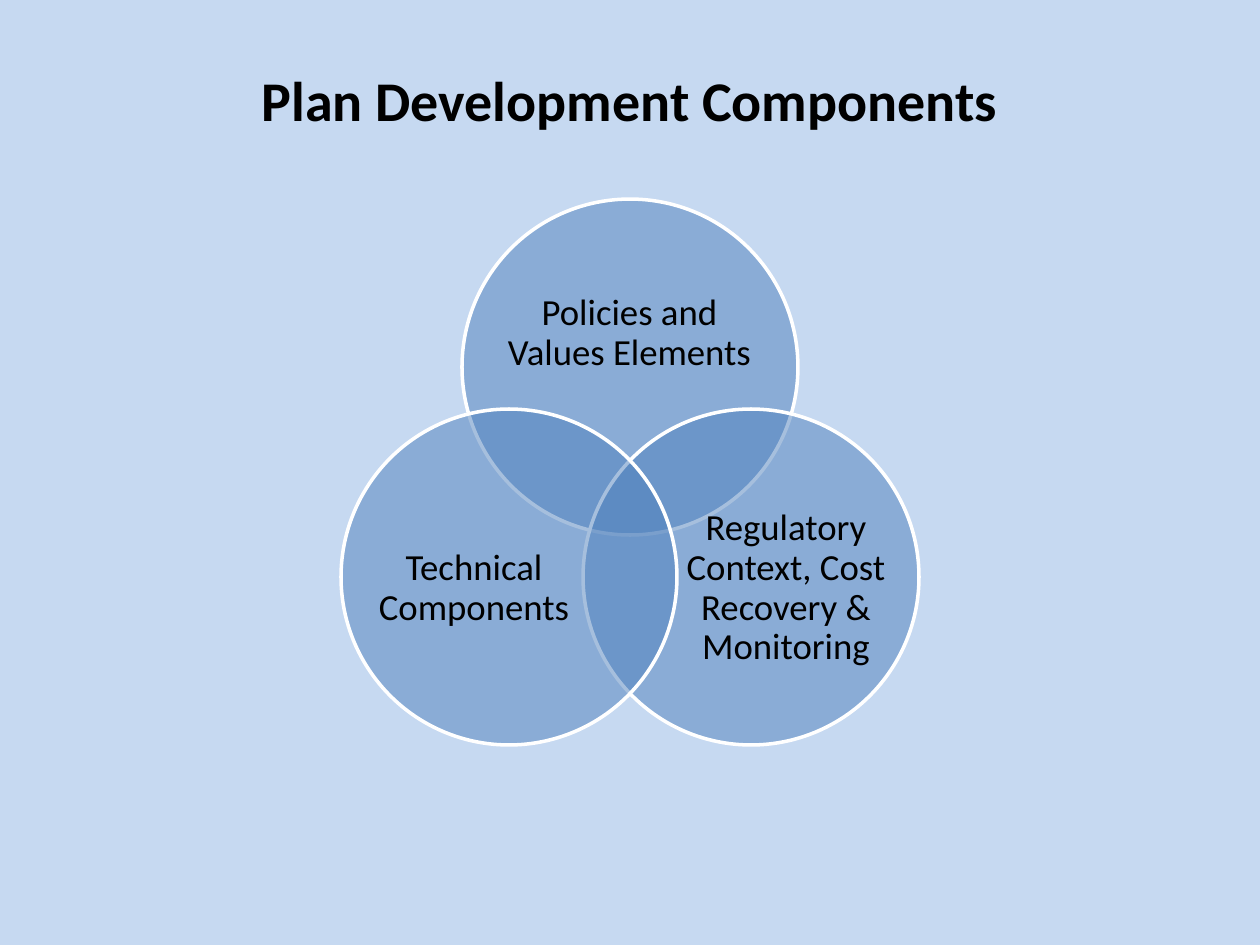
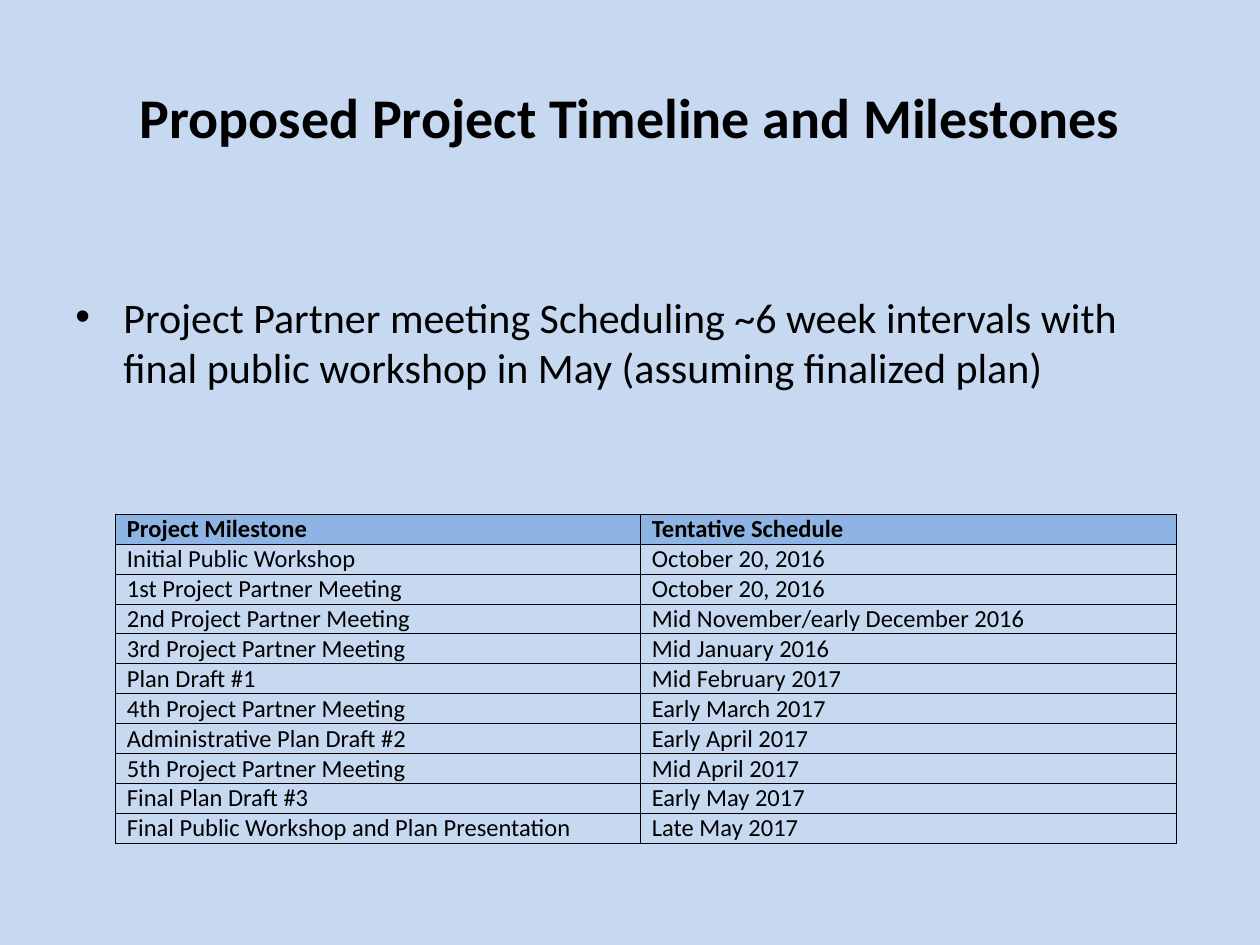
from lxml import etree
from pptx import Presentation
from pptx.dml.color import RGBColor
from pptx.enum.shapes import MSO_SHAPE as Preset
from pptx.enum.text import MSO_ANCHOR as Anchor, PP_ALIGN as Align
from pptx.oxml import parse_xml
from pptx.oxml.ns import nsdecls, qn
from pptx.util import Emu, Pt

COLORS = {
    "background": "C6D9F1",
    "text": "000000",
    "circle": "4F81BD",
    "outline": "FFFFFF",
    "header": "8EB4E3",
    "border": "000000",
}
FONT = "Calibri"
EMU_PER_PX = 914400 / 126


def px(*lengths):
    return [Emu(round(length * EMU_PER_PX)) for length in lengths]


def write(frame, text, size, bold=False, align=Align.LEFT):
    frame.word_wrap = True
    para = frame.paragraphs[0]
    para.text = text
    para.alignment = align
    span = para.runs[0]
    span.font.name = FONT
    span.font.size = Pt(size)
    span.font.bold = bold
    span.font.color.rgb = RGBColor.from_string(COLORS["text"])
    return para


deck = Presentation()
deck.slide_width, deck.slide_height = px(1260, 945)

pages = []
for title, top in [
    ("Plan Development Components", 21),
    ("Proposed Project Timeline and Milestones", 38),
]:
    page = deck.slides.add_slide(deck.slide_layouts[6])
    page.background.fill.solid()
    page.background.fill.fore_color.rgb = RGBColor.from_string(COLORS["background"])
    box = page.shapes.add_textbox(*px(63, top, 1134, 157))
    box.text_frame.vertical_anchor = Anchor.MIDDLE
    write(box.text_frame, title, 32, bold=True, align=Align.CENTER)
    pages.append(page)
components_page, timeline_page = pages

DIAMETER = 336
components = [
    ("Policies and Values Elements", (462, 199), (506, 258, 247, 151)),
    ("Regulatory Context, Cost Recovery & Monitoring", (583, 409), (685, 496, 202, 185)),
    ("Technical Components", (341, 409), (373, 496, 202, 185)),
]
for label, corner, label_area in components:
    circle = components_page.shapes.add_shape(
        Preset.OVAL, *px(*corner, DIAMETER, DIAMETER)
    )
    circle.shadow.inherit = False
    circle.fill.solid()
    circle.fill.fore_color.rgb = RGBColor.from_string(COLORS["circle"])
    fill_color = circle.fill._xPr.find(qn("a:solidFill"))[0]
    etree.SubElement(fill_color, qn("a:alpha"), val="50000")
    circle.line.color.rgb = RGBColor.from_string(COLORS["outline"])
    circle.line.width = Pt(2)

    box = components_page.shapes.add_textbox(*px(*label_area))
    frame = box.text_frame
    frame.margin_left = frame.margin_right = frame.margin_top = frame.margin_bottom = 0
    frame.vertical_anchor = Anchor.MIDDLE
    para = write(frame, label, 21, align=Align.CENTER)
    para.line_spacing = 0.9

box = timeline_page.shapes.add_textbox(*px(63, 285, 1134, 560))
para = write(
    box.text_frame,
    "Project Partner meeting Scheduling ~6 week intervals with "
    "final public workshop in May (assuming finalized plan)",
    24,
)
indent = px(48)[0]
properties = para._p.get_or_add_pPr()
properties.set("marL", str(indent))
properties.set("indent", str(-indent))
etree.SubElement(properties, qn("a:buFont"), typeface="Arial")
etree.SubElement(properties, qn("a:buChar"), char="•")

milestones = [
    ("Project Milestone", "Tentative Schedule"),
    ("Initial Public Workshop", "October 20, 2016"),
    ("1st Project Partner Meeting", "October 20, 2016"),
    ("2nd Project Partner Meeting", "Mid November/early December 2016"),
    ("3rd Project Partner Meeting", "Mid January 2016"),
    ("Plan Draft #1", "Mid February 2017"),
    ("4th Project Partner Meeting", "Early March 2017"),
    ("Administrative Plan Draft #2", "Early April 2017"),
    ("5th Project Partner Meeting", "Mid April 2017"),
    ("Final Plan Draft #3", "Early May 2017"),
    ("Final Public Workshop and Plan Presentation", "Late May 2017"),
]
COLUMN_WIDTHS = (525, 536)
ROW_HEIGHT = 30
table = timeline_page.shapes.add_table(
    len(milestones),
    len(COLUMN_WIDTHS),
    *px(115, 514, sum(COLUMN_WIDTHS), ROW_HEIGHT * len(milestones)),
).table
table.horz_banding = False
for column, width in zip(table.columns, px(*COLUMN_WIDTHS)):
    column.width = width

for row_index, milestone in enumerate(milestones):
    is_header = row_index == 0
    table.rows[row_index].height = px(ROW_HEIGHT)[0]
    for column_index, text in enumerate(milestone):
        cell = table.cell(row_index, column_index)
        cell.margin_left, cell.margin_right = px(12, 12)
        cell.margin_top = cell.margin_bottom = 0
        write(cell.text_frame, text, 14, bold=is_header)
        if is_header:
            cell.fill.solid()
            cell.fill.fore_color.rgb = RGBColor.from_string(COLORS["header"])
        else:
            cell.fill.background()
        cell_properties = cell._tc.get_or_add_tcPr()
        for position, side in enumerate("LRTB"):
            border = parse_xml(
                f'<a:ln{side} {nsdecls("a")} w="{Pt(0.5)}"><a:solidFill>'
                f'<a:srgbClr val="{COLORS["border"]}"/></a:solidFill></a:ln{side}>'
            )
            cell_properties.insert(position, border)

deck.save("out.pptx")
